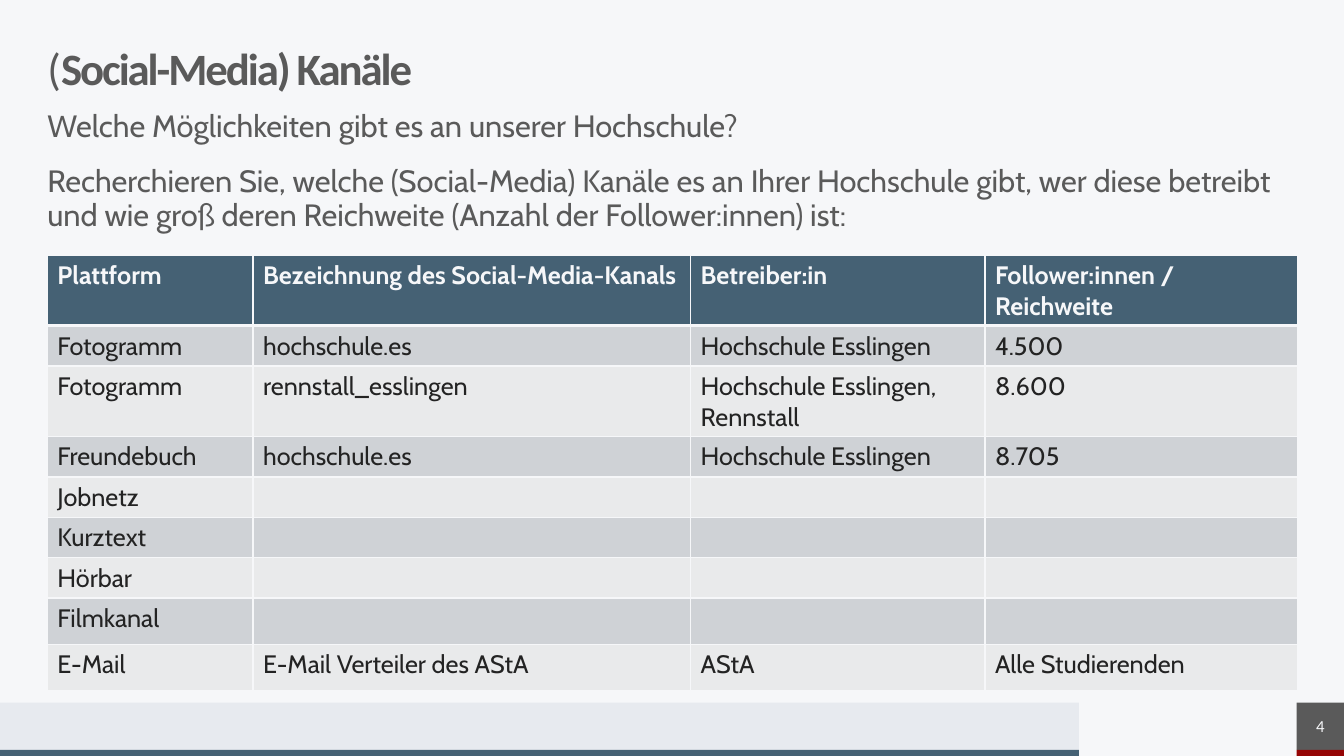
from dataclasses import dataclass

from lxml.etree import SubElement
from pptx import Presentation
from pptx.dml.color import RGBColor as Color
from pptx.enum.shapes import MSO_SHAPE as Preset
from pptx.enum.text import MSO_ANCHOR as Anchor, PP_ALIGN as Align
from pptx.oxml.ns import qn
from pptx.util import Inches, Pt


@dataclass(frozen=True)
class Theme:
    paper: str = "F6F7F9"
    text: str = "5A5A5A"
    ink: str = "232323"
    blue: str = "456174"
    red: str = "950505"
    footer: str = "E7EAEF"
    bands: tuple = ("E9EAEB", "CFD2D6")
    heading_font: str = "Calibri"
    body_font: str = "Cabin"
    title_size: int = 32
    body_size: int = 22
    table_size: int = 18
    number_size: int = 12


theme = Theme()
WIDTH, HEIGHT = 13.33, 7.5
UNIT = 0.47  # margin, title height and page number square
STRIPE = 0.06
CONTENT = WIDTH - 2 * UNIT
FOOTER_TOP = HEIGHT - STRIPE - UNIT
FOOTER_WIDTH = 10.7


def style(paragraph, font_name, size, color, bold=None):
    font = paragraph.font
    font.name, font.size, font.bold = font_name, Pt(size), bold
    font.color.rgb = Color.from_string(color)


def clear_margins(frame):
    frame.word_wrap = True
    frame.margin_left = frame.margin_top = frame.margin_right = frame.margin_bottom = 0


presentation = Presentation()
presentation.slide_width, presentation.slide_height = Inches(WIDTH), Inches(HEIGHT)
slide = presentation.slides.add_slide(presentation.slide_layouts[6])
slide.background.fill.solid()
slide.background.fill.fore_color.rgb = Color.from_string(theme.paper)

# Footer: a band and a page number, each with a stripe below
for left, width, band_color, stripe_color, label in (
    (0, FOOTER_WIDTH, theme.footer, theme.blue, ""),
    (WIDTH - UNIT, UNIT, theme.text, theme.red, "4"),
):
    for top, height, color, text in (
        (FOOTER_TOP, UNIT, band_color, label),
        (HEIGHT - STRIPE, STRIPE, stripe_color, ""),
    ):
        block = slide.shapes.add_shape(
            Preset.RECTANGLE, Inches(left), Inches(top), Inches(width), Inches(height))
        block.shadow.inherit = False
        block.fill.solid()
        block.fill.fore_color.rgb = Color.from_string(color)
        block.line.fill.background()
        if text:
            clear_margins(block.text_frame)
            block.text_frame.vertical_anchor = Anchor.MIDDLE
            paragraph = block.text_frame.paragraphs[0]
            paragraph.text = text
            paragraph.alignment = Align.CENTER
            style(paragraph, theme.heading_font, theme.number_size, theme.paper)

# Title, question and task: top, height, font, size, (text, bold) runs
for top, height, font_name, size, runs in (
    (UNIT, UNIT, theme.heading_font, theme.title_size,
     (("(", False), ("Social-Media) Kanäle", True))),
    (1.1, 0.39, theme.body_font, theme.body_size,
     (("Welche Möglichkeiten gibt es an unserer Hochschule?", False),)),
    (1.65, 0.75, theme.body_font, theme.body_size,
     (("Recherchieren Sie, welche (Social-Media) Kanäle es an Ihrer Hochschule gibt, "
       "wer diese betreibt und wie groß deren Reichweite "
       "(Anzahl der Follower:innen) ist:", False),)),
):
    box = slide.shapes.add_textbox(Inches(UNIT), Inches(top), Inches(CONTENT), Inches(height))
    clear_margins(box.text_frame)
    paragraph = box.text_frame.paragraphs[0]
    paragraph.line_spacing = 0.9
    style(paragraph, font_name, size, theme.text)
    for text, bold in runs:
        run = paragraph.add_run()
        run.text = text
        if size == theme.title_size:
            box.text_frame.vertical_anchor = Anchor.MIDDLE
            run.font.bold = bold
            run.font._element.set("spc", "-150")

# Channel table
channels = (
    ("Plattform", "Bezeichnung des Social-Media-Kanals", "Betreiber:in",
     "Follower:innen / Reichweite"),
    ("Fotogramm", "hochschule.es", "Hochschule Esslingen", "4.500"),
    ("Fotogramm", "rennstall_esslingen", "Hochschule Esslingen, Rennstall", "8.600"),
    ("Freundebuch", "hochschule.es", "Hochschule Esslingen", "8.705"),
    ("Jobnetz", "", "", ""),
    ("Kurztext", "", "", ""),
    ("Hörbar", "", "", ""),
    ("Filmkanal", "", "", ""),
    ("E-Mail", "E-Mail Verteiler des AStA", "AStA", "Alle Studierenden"),
)
column_widths = (2.04, 4.34, 2.92, 3.1)
row_heights = (0.63, *[0.33] * 6, 0.46, 0.46)
table = slide.shapes.add_table(
    len(channels), len(column_widths), Inches(UNIT), Inches(2.53),
    Inches(sum(column_widths)), Inches(sum(row_heights))).table
for column, width in zip(table.columns, column_widths):
    column.width = Inches(width)
for row, height in zip(table.rows, row_heights):
    row.height = Inches(height)

for row_index, channel in enumerate(channels):
    header = row_index == 0
    for column_index, text in enumerate(channel):
        cell = table.cell(row_index, column_index)
        cell.text = text
        style(cell.text_frame.paragraphs[0], theme.body_font, theme.table_size,
              theme.paper if header else theme.ink, header)
        properties = cell._tc.get_or_add_tcPr()
        for side in ("lnL", "lnR", "lnT", "lnB"):
            below_header = (row_index, side) in ((0, "lnB"), (1, "lnT"))
            border = SubElement(properties, qn(f"a:{side}"), w=str(Pt(3 if below_header else 1)))
            SubElement(SubElement(border, qn("a:solidFill")), qn("a:srgbClr"), val=theme.paper)
        cell.fill.solid()
        cell.fill.fore_color.rgb = Color.from_string(
            theme.blue if header else theme.bands[row_index % 2])

presentation.save("out.pptx")
